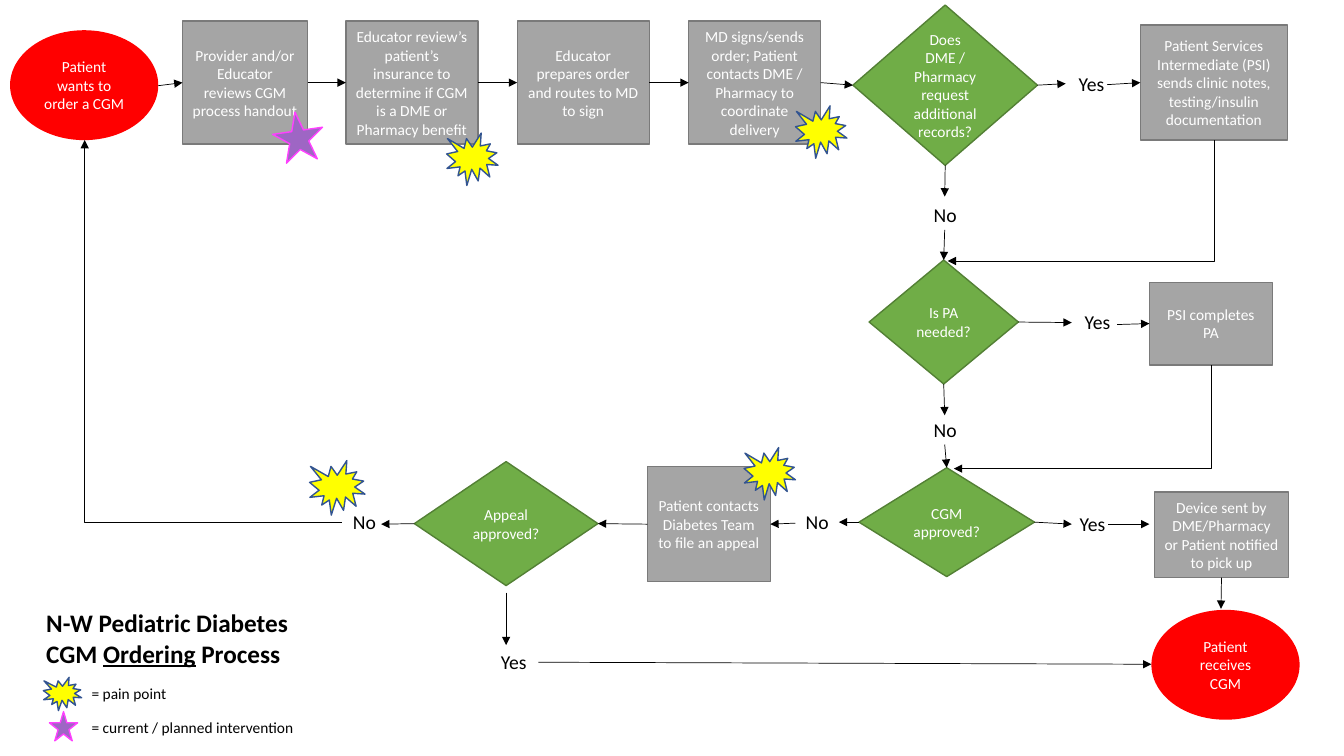
from lxml.etree import SubElement
from pptx import Presentation
from pptx.dml.color import RGBColor
from pptx.enum.shapes import MSO_CONNECTOR, MSO_SHAPE
from pptx.enum.text import MSO_ANCHOR, PP_ALIGN
from pptx.oxml.ns import qn
from pptx.util import Inches, Pt

CELL = Inches(0.1)
COLUMNS, ROWS = 133.3, 75
BOX, DECISION, TERMINAL = MSO_SHAPE.RECTANGLE, MSO_SHAPE.DIAMOND, MSO_SHAPE.OVAL
PAIN, INTERVENTION = MSO_SHAPE.EXPLOSION1, MSO_SHAPE.STAR_5_POINT
COLORS = {
    BOX: ("A5A5A5", "7A7A7A"),
    DECISION: ("70AD47", "538035"),
    TERMINAL: ("FF0000", None),
    PAIN: ("FFFF00", "325491"),
    INTERVENTION: ("9E66C4", "FF40FF"),
}
TOP, LEFT, BOTTOM, RIGHT = range(4)

deck = Presentation()
deck.slide_width, deck.slide_height = int(COLUMNS * CELL), ROWS * CELL
slide = deck.slides.add_slide(deck.slide_layouts[6])


def paint(color_format, hex_color):
    color_format.rgb = RGBColor.from_string(hex_color)


def place(kind, area):
    symbol = slide.shapes.add_shape(kind, *[int(n * CELL) for n in area])
    fill, outline = COLORS[kind]
    symbol.shadow.inherit = False
    symbol.fill.solid()
    paint(symbol.fill.fore_color, fill)
    if outline:
        paint(symbol.line.color, outline)
        symbol.line.width = Pt(1)
    else:
        symbol.line.fill.background()
    return symbol


step_starts = [34.3 + 17 * i for i in range(3)]
steps = {
    "want": (TERMINAL, (1, 3, 14.7, 10.9), "Patient wants to order a CGM"),
    "handout": (BOX, (18.1, 2.1, 12.4, 12.2),
                "Provider and/or Educator reviews CGM process handout"),
    "insurance": (BOX, (step_starts[0], 2.1, 13.1, 12.2),
                  "Educator review’s patient’s insurance to determine if CGM "
                  "is a DME or Pharmacy benefit"),
    "order": (BOX, (step_starts[1], 2.1, 13.1, 12.2),
              "Educator prepares order and routes to MD to sign"),
    "signing": (BOX, (step_starts[2], 2.1, 13.1, 12.2),
                "MD signs/sends order; Patient contacts DME / Pharmacy to "
                "coordinate delivery"),
    "records": (DECISION, (84.6, 0.5, 18.3, 15.9),
                "Does DME / Pharmacy request additional records?"),
    "notes": (BOX, (113.1, 2.5, 14.6, 11.4),
              "Patient Services Intermediate (PSI) sends clinic notes, "
              "testing/insulin documentation"),
    "pa": (DECISION, (86.2, 25.8, 14.8, 12.3), "Is PA needed?"),
    "psi": (BOX, (114, 28, 12.2, 8.2), "PSI completes PA"),
    "approval": (DECISION, (85.2, 46.4, 17.4, 10.8), "CGM approved?"),
    "device": (BOX, (114.5, 48.8, 13.3, 8.5),
               "Device sent by DME/Pharmacy or Patient notified to pick up"),
    "receive": (TERMINAL, (114.2, 60.5, 14.7, 10.9), "Patient receives CGM"),
    "filing": (BOX, (64.2, 46.3, 12.2, 11.4),
               "Patient contacts Diabetes Team to file an appeal"),
    "appeal": (DECISION, (41.1, 45.8, 18.2, 12.3), "Appeal approved?"),
}
placed = {}
for step, (kind, area, wording) in steps.items():
    placed[step] = place(kind, area)
    frame = placed[step].text_frame
    frame.word_wrap = True
    frame.vertical_anchor = MSO_ANCHOR.MIDDLE
    words = frame.paragraphs[0]
    words.text = wording
    words.alignment = PP_ALIGN.CENTER
    words.font.size, words.font.name = Pt(11), "Calibri"
    paint(words.font.color, "FFFFFF")

STRAIGHT, ELBOW = MSO_CONNECTOR.STRAIGHT, MSO_CONNECTOR.ELBOW
routes = [
    (STRAIGHT, (15.7, 8.5), ("handout", LEFT), "tailEnd"),
    (STRAIGHT, ("handout", RIGHT), ("insurance", LEFT), "tailEnd"),
    (STRAIGHT, ("insurance", RIGHT), ("order", LEFT), "tailEnd"),
    (STRAIGHT, ("order", RIGHT), ("signing", LEFT), "tailEnd"),
    (STRAIGHT, ("signing", RIGHT), ("records", LEFT), "tailEnd"),
    (STRAIGHT, ("records", RIGHT), (105.7, 8.3), "tailEnd"),
    (STRAIGHT, (109.8, 8.4), ("notes", LEFT), "tailEnd"),
    (STRAIGHT, ("records", BOTTOM), (93.7, 19.5), "tailEnd"),
    (STRAIGHT, (93.7, 22.8), ("pa", TOP), "tailEnd"),
    (STRAIGHT, ("pa", RIGHT), (106.3, 32), "tailEnd"),
    (STRAIGHT, (110.8, 32.2), ("psi", LEFT), "tailEnd"),
    (STRAIGHT, ("pa", BOTTOM), (93.7, 41.2), "tailEnd"),
    (STRAIGHT, (93.7, 44.1), ("approval", TOP), "tailEnd"),
    (STRAIGHT, ("approval", RIGHT), (106.3, 52), "tailEnd"),
    (STRAIGHT, (109.9, 52), (114, 52), "tailEnd"),
    (STRAIGHT, ("device", BOTTOM), (121.1, 60.4), "tailEnd"),
    (STRAIGHT, ("approval", LEFT), (83.2, 51.8), "tailEnd"),
    (STRAIGHT, (78.9, 51.9), ("filing", RIGHT), "tailEnd"),
    (STRAIGHT, ("filing", LEFT), ("appeal", RIGHT), "tailEnd"),
    (STRAIGHT, ("appeal", LEFT), (37.8, 52), "tailEnd"),
    (STRAIGHT, (50.2, 58.8), (50.2, 64), "tailEnd"),
    (STRAIGHT, (53.4, 65.7), (114.2, 65.9), "tailEnd"),
    (ELBOW, (94, 25.9), (120.4, 13.9), "headEnd"),
    (ELBOW, (94.6, 46.5), (120.1, 36.2), "headEnd"),
    (ELBOW, (33.9, 51.8), (8.4, 13.9), "tailEnd"),
]
for form, start, finish, arrow_end in routes:
    ends = [(0, 0) if end[0] in placed else end for end in (start, finish)]
    route = slide.shapes.add_connector(
        form, *[int(n * CELL) for end in ends for n in end])
    if start[0] in placed:
        route.begin_connect(placed[start[0]], start[1])
    if finish[0] in placed:
        route.end_connect(placed[finish[0]], finish[1])
    paint(route.line.color, "000000")
    route.line.width = Pt(0.5)
    properties = route._element.spPr
    if form == ELBOW:
        properties.find(qn("a:prstGeom")).set("prst", "bentConnector2")
    SubElement(properties.find(qn("a:ln")), qn("a:" + arrow_end), type="triangle")
    SubElement(properties, qn("a:effectLst"))

CENTER, START = PP_ALIGN.CENTER, PP_ALIGN.LEFT
answers = [
    ("Yes", 105.7, 6.6), ("No", 91.6, 19.6), ("Yes", 106.3, 30.3),
    ("No", 91.6, 41), ("Yes", 105.8, 50.3), ("No", 78.9, 50.1),
    ("No", 34, 50.1), ("Yes", 48.4, 64),
]
captions = [
    ((x, y, 5.1 if answer == "Yes" else 4.3, 3.4), [[answer]], 14, CENTER)
    for answer, x, y in answers
] + [
    ((3.6, 59.8, 38, 7.1),
     [["N-W Pediatric Diabetes"], ["CGM ", "Ordering", " Process"]], 18, START),
    ((8.1, 67.4, 38, 2.9), [["= pain point"]], 11, START),
    ((8.1, 70.7, 38, 2.9), [["= current / planned intervention"]], 11, START),
]
for area, lines, size, alignment in captions:
    caption = slide.shapes.add_textbox(*[int(n * CELL) for n in area]).text_frame
    caption.word_wrap = alignment == START
    for i, pieces in enumerate(lines):
        line = caption.add_paragraph() if i else caption.paragraphs[0]
        line.alignment = alignment
        line.font.size, line.font.name = Pt(size), "Calibri"
        line.font.bold = size == 18
        paint(line.font.color, "000000")
        for piece in pieces:
            run = line.add_run()
            run.text = piece
            if piece == "Ordering":
                run.font.underline = True

markers = [
    (PAIN, (30.7, 45.7, 5.5, 5.4), 0),
    (PAIN, (73.8, 44.4, 5.1, 5.2), 0),
    (PAIN, (78.9, 10.5, 5.1, 5.2), 0),
    (PAIN, (44.3, 13.2, 5.1, 5.2), 0),
    (PAIN, (4.3, 67.2, 3.8, 3.3), 0),
    (INTERVENTION, (4.9, 70.6, 2.8, 2.9), 0),
    (INTERVENTION, (27.1, 11.1, 5, 4.9), 351.9),
]
for kind, area, angle in markers:
    place(kind, area).rotation = angle

deck.save("out.pptx")
